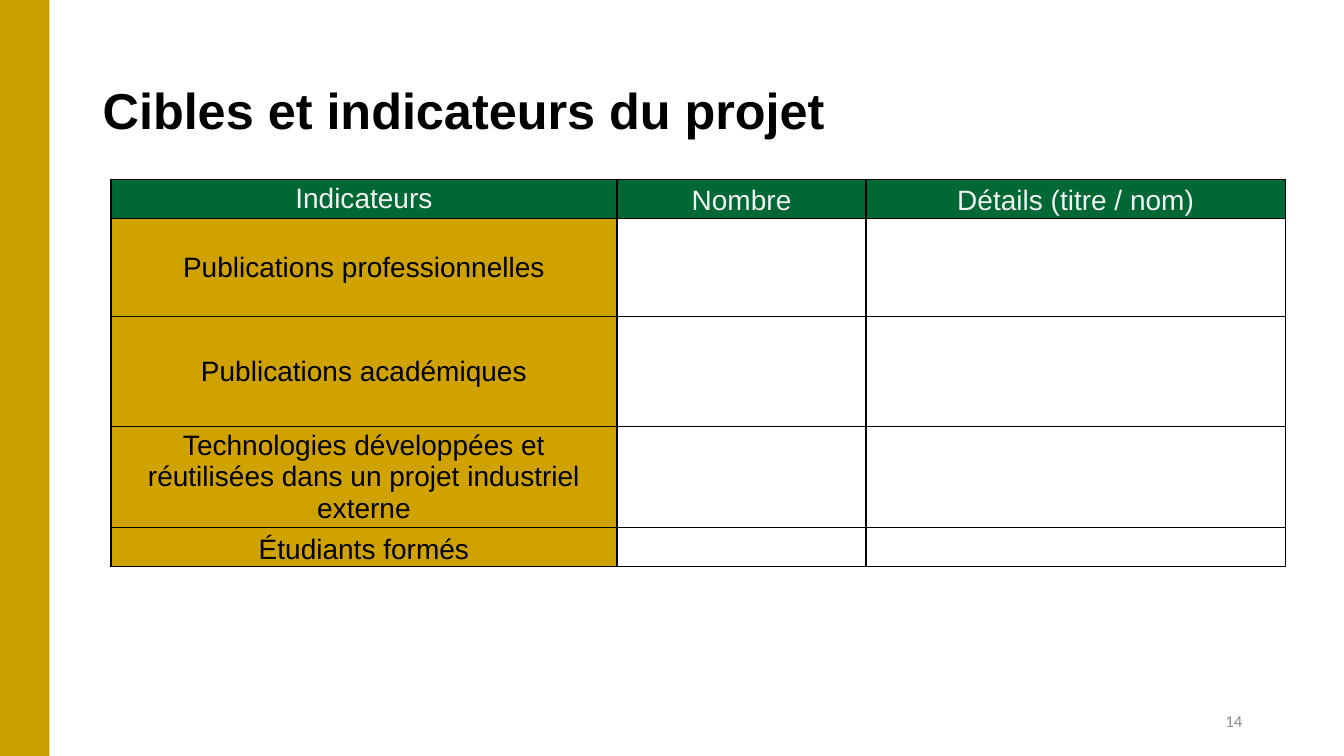
import pptx
import pptx.dml.color
import pptx.enum.shapes
import pptx.enum.text
import pptx.oxml
import pptx.oxml.ns
import pptx.util

Inches = pptx.util.Inches
Pt = pptx.util.Pt
ALIGN = pptx.enum.text.PP_ALIGN
MIDDLE = pptx.enum.text.MSO_ANCHOR.MIDDLE

TITLE = "Cibles et indicateurs du projet"
PAGE_NUMBER = "14"
HEADERS = ["Indicateurs", "Nombre", "Détails (titre / nom)"]
INDICATORS = [
    "Publications professionnelles",
    "Publications académiques",
    "Technologies développées et réutilisées dans un projet industriel externe",
    "Étudiants formés",
]
SPACED = {"Nombre", "Détails (titre / nom)", "Étudiants formés"}
COLUMN_WIDTHS = [5.02, 2.47, 4.16]
ROW_HEIGHTS = [0.36, 0.98, 1.09, 0.92, 0.36]
GREEN, GOLD, BAND_GOLD = "006835", "CFA200", "CA9E00"
BLACK, PALE, GREY = "000000", "F2F2F2", "8C8C8C"


def color(value):
    return pptx.dml.color.RGBColor.from_string(value)


def write(frame, text, size=20, font="Arial", ink=BLACK, bold=False,
          align=ALIGN.LEFT, line=1.0, space=0):
    para = frame.paragraphs[0]
    para.alignment = align
    para.line_spacing = line
    para.space_before = para.space_after = Pt(space)
    span = para.add_run()
    span.text = text
    span.font.size = Pt(size)
    span.font.name = font
    span.font.bold = bold
    span.font.color.rgb = color(ink)


def add_text(page, bounds, text, **style):
    box = page.shapes.add_textbox(*map(Inches, bounds))
    box.text_frame.word_wrap = True
    box.text_frame.vertical_anchor = MIDDLE
    write(box.text_frame, text, **style)


def add_borders(cell):
    properties = cell._tc.get_or_add_tcPr()
    for position, side in enumerate(("lnL", "lnR", "lnT", "lnB")):
        border = pptx.oxml.parse_xml(
            f'<a:{side} {pptx.oxml.ns.nsdecls("a")} w="12700"><a:solidFill>'
            f'<a:srgbClr val="{BLACK}"/></a:solidFill></a:{side}>')
        properties.insert(position, border)


def format_cell(cell, text, fill, ink):
    cell.margin_left = cell.margin_right = Inches(0.07)
    cell.margin_top = cell.margin_bottom = 0
    cell.vertical_anchor = MIDDLE
    if fill:
        cell.fill.solid()
        cell.fill.fore_color.rgb = color(fill)
    else:
        cell.fill.background()
    add_borders(cell)
    if text:
        spacing = {"line": 1.15, "space": 6} if text in SPACED else {}
        write(cell.text_frame, text, ink=ink, align=ALIGN.CENTER, **spacing)


def add_indicator_table(page):
    rows = [HEADERS] + [[name, "", ""] for name in INDICATORS]
    table = page.shapes.add_table(
        len(rows), len(HEADERS), Inches(1.1), Inches(1.78),
        Inches(sum(COLUMN_WIDTHS)), Inches(sum(ROW_HEIGHTS))).table
    for column, width in zip(table.columns, COLUMN_WIDTHS):
        column.width = Inches(width)
    for row, height in zip(table.rows, ROW_HEIGHTS):
        row.height = Inches(height)
    for r, texts in enumerate(rows):
        for c, text in enumerate(texts):
            fill = GREEN if r == 0 else GOLD if c == 0 else None
            format_cell(table.cell(r, c), text, fill, PALE if r == 0 else BLACK)


def main():
    deck = pptx.Presentation()
    deck.slide_width, deck.slide_height = Inches(13.33), Inches(7.5)
    page = deck.slides.add_slide(deck.slide_layouts[6])
    band = page.shapes.add_shape(
        pptx.enum.shapes.MSO_SHAPE.RECTANGLE, 0, 0, Inches(0.49), deck.slide_height)
    band.shadow.inherit = False
    band.fill.solid()
    band.fill.fore_color.rgb = color(BAND_GOLD)
    band.line.fill.background()
    add_text(page, (9.42, 6.95, 3, 0.4), PAGE_NUMBER,
             size=12, font="Calibri", ink=GREY, align=ALIGN.RIGHT)
    add_text(page, (0.92, 0.4, 11.5, 1.45), TITLE, size=36, bold=True, line=0.9)
    add_indicator_table(page)
    deck.save("out.pptx")


if __name__ == "__main__":
    main()
